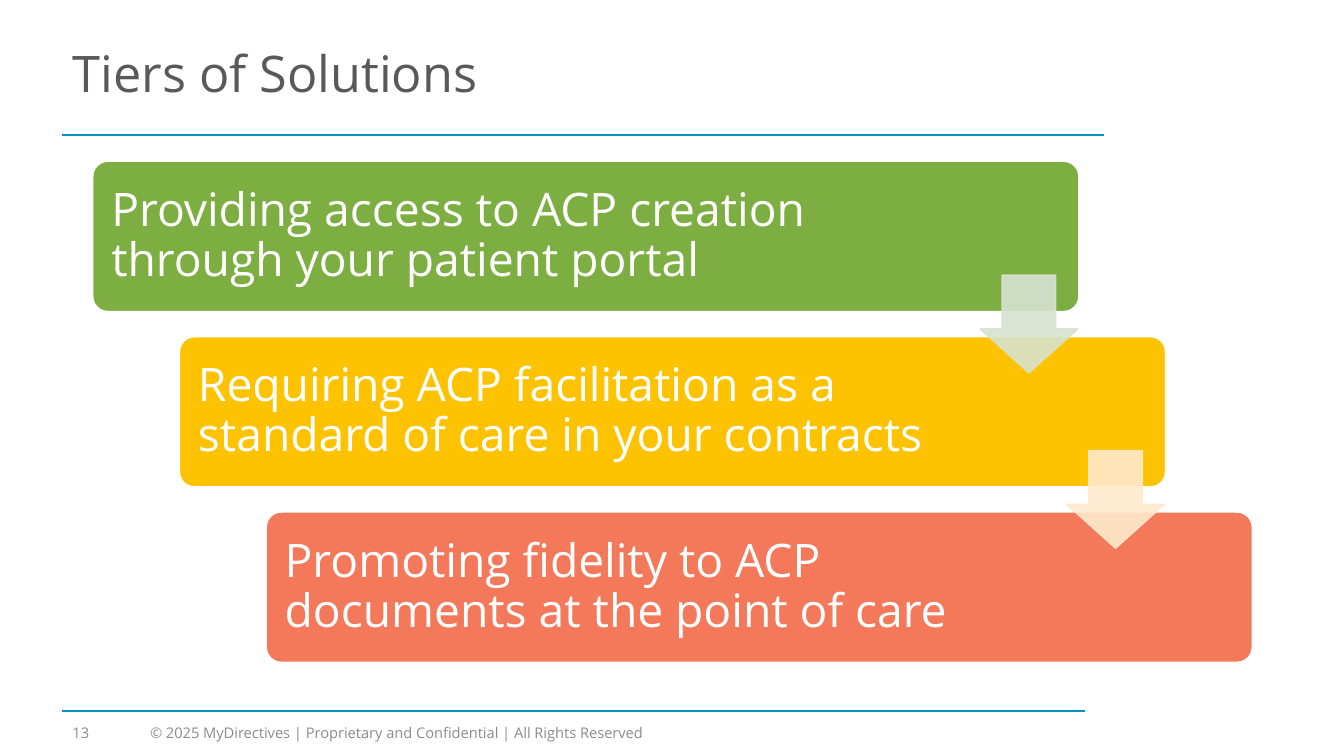
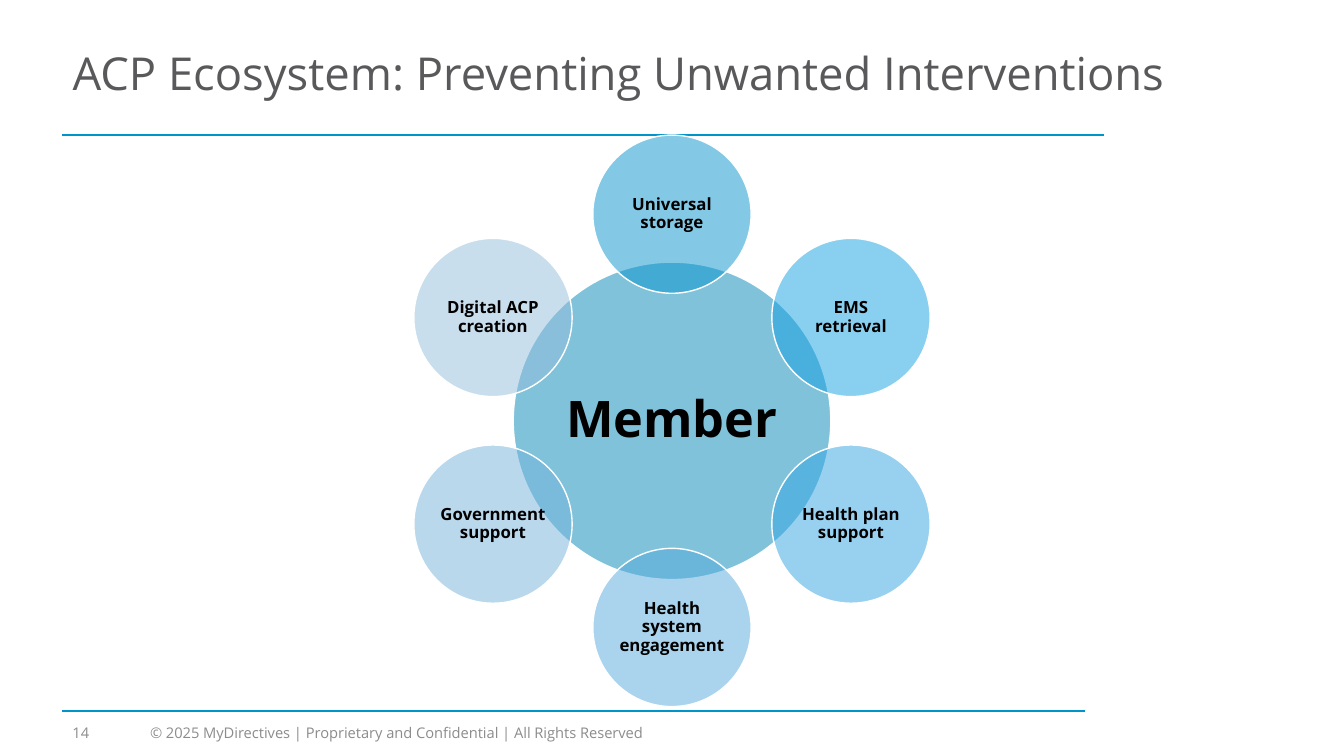
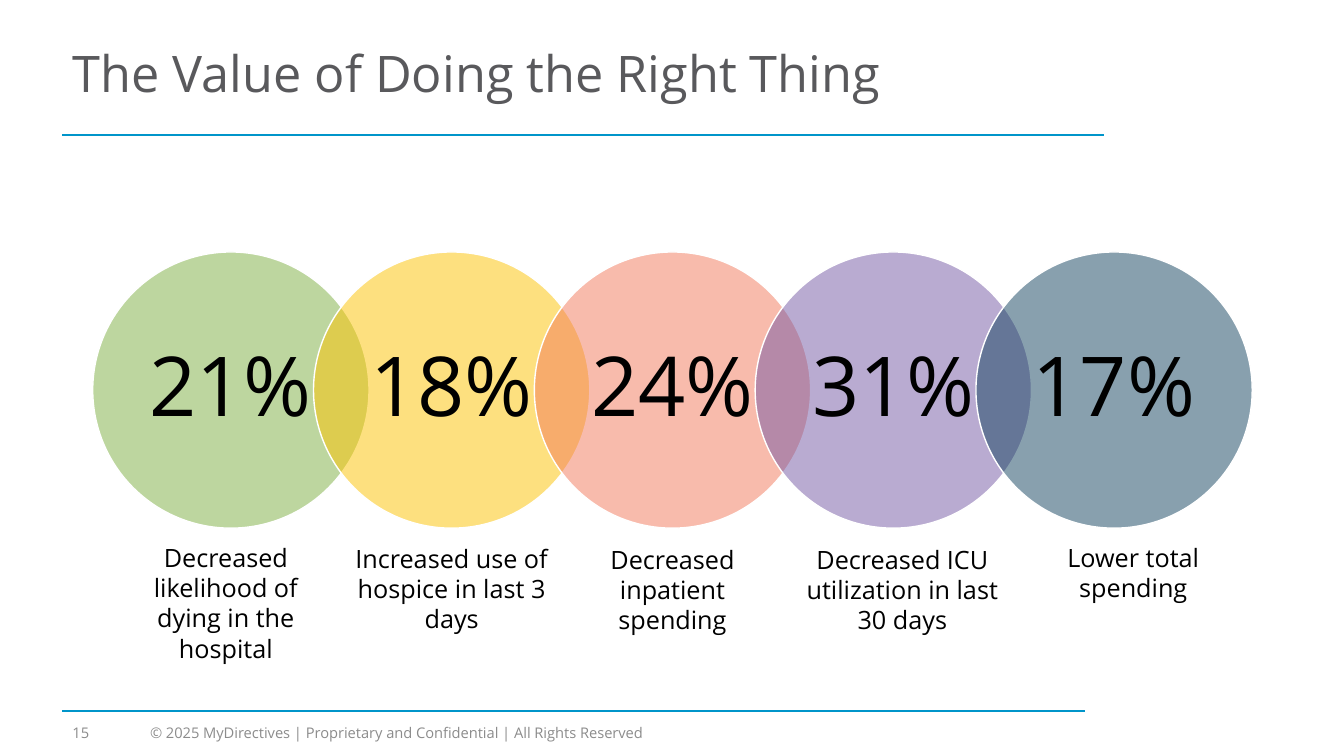
from math import cos, radians, sin

from pptx import Presentation
from pptx.dml.color import RGBColor
from pptx.enum.shapes import MSO_CONNECTOR, MSO_SHAPE
from pptx.enum.text import MSO_ANCHOR, MSO_AUTO_SIZE, PP_ALIGN
from pptx.oxml.ns import qn
from pptx.util import Inches, Pt

STRAIGHT = MSO_CONNECTOR.STRAIGHT
ROUNDED, ELLIPSE, DOWN_ARROW = (
    MSO_SHAPE.ROUNDED_RECTANGLE, MSO_SHAPE.OVAL, MSO_SHAPE.DOWN_ARROW)
TOP, MIDDLE, BOTTOM = MSO_ANCHOR.TOP, MSO_ANCHOR.MIDDLE, MSO_ANCHOR.BOTTOM
LEFT, CENTER = PP_ALIGN.LEFT, PP_ALIGN.CENTER
NO_AUTOFIT = MSO_AUTO_SIZE.NONE
TITLE_ONLY = 5

WIDTH, HEIGHT = Inches(13.33), Inches(7.5)
ROWS = 75
CELL = HEIGHT / ROWS  # square grid cell: one column wide, one row high

FONT = "Open Sans"
WHITE, BLACK = "FFFFFF", "000000"
RULE, TITLE, FOOTER = "0095CA", "59595C", "8C8C8C"
GREEN, YELLOW, CORAL, PURPLE, NAVY = "7CAE41", "FDC300", "F3795A", "7459A5", "12425F"
COPYRIGHT = "© 2025 MyDirectives | Proprietary and Confidential | All Rights Reserved"


def cells(*counts):
    return [round(count * CELL) for count in counts]


def color(hex_code):
    return RGBColor.from_string(hex_code)


def write(frame, text, size=18, ink=BLACK, bold=False, align=LEFT,
          anchor=TOP, spacing=1, insets=(1, 0.5, 1, 0.5)):
    """Fill a text frame with one paragraph; insets are left, top, right, bottom."""
    frame.auto_size = NO_AUTOFIT
    frame.word_wrap = True
    frame.vertical_anchor = anchor
    (frame.margin_left, frame.margin_top,
     frame.margin_right, frame.margin_bottom) = cells(*insets)
    paragraph = frame.paragraphs[0]
    paragraph.alignment = align
    paragraph.line_spacing = spacing
    run = paragraph.add_run()
    run.text = text
    run.font.name = FONT
    run.font.size = Pt(size)
    run.font.bold = bold
    run.font.color.rgb = color(ink)


class Deck:
    """Holds the shared style and the slide being drawn."""

    def __init__(self, first_number):
        self.presentation = Presentation()
        self.presentation.slide_width = WIDTH
        self.presentation.slide_height = HEIGHT
        self.number = first_number
        self.slide = None

    def new_slide(self, title, size=36):
        layout = self.presentation.slide_layouts[TITLE_ONLY]
        self.slide = self.presentation.slides.add_slide(layout)
        self.rule(13.4, 109.5)
        self.rule(70.5, 107.6)
        footer = dict(size=10.5, ink=FOOTER, anchor=BOTTOM)
        self.label(13.9, 70.1, 60.3, 4, COPYRIGHT, **footer)
        self.label(6.2, 70.1, 5.8, 4, str(self.number), **footer)
        heading = self.slide.shapes.title
        heading.left, heading.top, heading.width, heading.height = cells(
            6.2, 1.7, 118, 11.7)
        write(heading.text_frame, title, size=size, ink=TITLE,
              anchor=MIDDLE, spacing=0.9)
        self.number += 1

    def rule(self, row, end):
        line = self.slide.shapes.add_connector(STRAIGHT, *cells(6.2, row, end, row))
        line.line.color.rgb = color(RULE)
        line.line.width = Pt(1.5)
        properties = line._element.spPr
        properties.append(properties.makeelement(qn("a:effectLst"), {}))

    def label(self, left, top, width, height, text, **style):
        box = self.slide.shapes.add_textbox(*cells(left, top, width, height))
        write(box.text_frame, text, **style)

    def block(self, kind, left, top, width, height, fill, outline=WHITE,
              opacity=100, adjust=(), text=None, **style):
        """Draw a preset shape; opacity applies to its fill colour."""
        shape = self.slide.shapes.add_shape(kind, *cells(left, top, width, height))
        shape.shadow.inherit = False
        for index, value in enumerate(adjust):
            shape.adjustments[index] = value
        shape.fill.solid()
        shape.fill.fore_color.rgb = color(fill)
        shape.line.color.rgb = color(outline)
        shape.line.width = Pt(1)
        if opacity < 100:
            for node in shape._element.spPr.iter(qn("a:srgbClr")):
                if node.get("val") == fill:
                    alpha = node.makeelement(
                        qn("a:alpha"), {"val": str(opacity * 1000)})
                    node.append(alpha)
        if text:
            write(shape.text_frame, text, anchor=MIDDLE, spacing=0.9, **style)

    def circle(self, center_x, center_y, diameter, fill, text, **style):
        self.block(ELLIPSE, center_x - diameter / 2, center_y - diameter / 2,
                   diameter, diameter, fill, opacity=50, text=text,
                   align=CENTER, **style)


def draw_tiers(deck):
    tiers = [
        (GREEN, "Providing access to ACP creation through your patient portal"),
        (YELLOW, "Requiring ACP facilitation as a standard of care in your contracts"),
        (CORAL, "Promoting fidelity to ACP documents at the point of care"),
    ]
    arrow_tints = ["D7E3CF", "FEE9CC"]
    step_x, step_y = 8.6, 17.4
    deck.new_slide("Tiers of Solutions")
    for step, (fill, text) in enumerate(tiers):
        deck.block(ROUNDED, 9.2 + step * step_x, 16 + step * step_y, 97.8, 14.9,
                   fill, adjust=[0.1], text=text, size=33, ink=WHITE,
                   insets=(1.4, 1.4, 19.7, 1.4))
    for step, tint in enumerate(arrow_tints):
        deck.block(DOWN_ARROW, 97.2 + step * step_x, 27.3 + step * step_y, 9.7, 9.7,
                   tint, outline=tint, opacity=90, adjust=[0.55, 0.45])


def draw_ecosystem(deck):
    partners = [
        ("0994CD", "Universal storage"),
        ("14A0E1", "EMS retrieval"),
        ("32A5E2", "Health plan support"),
        ("56ABDD", "Health system engagement"),
        ("77B3DB", "Government support"),
        ("95BEDC", "Digital ACP creation"),
    ]
    hub_x, hub_y, orbit = 66.65, 41.75, 20.5
    deck.new_slide("ACP Ecosystem: Preventing Unwanted Interventions", size=32.4)
    deck.circle(hub_x, hub_y, 31.5, "0087B7", "Member", size=36, bold=True,
                insets=[0.5] * 4)
    for position, (fill, text) in enumerate(partners):
        angle = radians(position * 360 / len(partners))
        deck.circle(hub_x + orbit * sin(angle), hub_y - orbit * cos(angle), 15.7,
                    fill, text, size=12, bold=True, insets=[0.2] * 4)


def draw_value(deck):
    outcomes = [
        (GREEN, "21%", 11.2, 53.3, "Decreased likelihood of dying in the hospital"),
        (YELLOW, "18%", 33.6, 53.4, "Increased use of hospice in last 3 days"),
        (CORAL, "24%", 55.5, 53.5, "Decreased inpatient spending"),
        (PURPLE, "31%", 78.3, 53.5, "Decreased ICU utilization in last 30 days"),
        (NAVY, "17%", 101.2, 53.3, "Lower total spending"),
    ]
    deck.new_slide("The Value of Doing the Right Thing")
    for position, (fill, share, left, top, caption) in enumerate(outcomes):
        deck.circle(22.9 + position * 21.9, 38.7, 27.4, fill, share, size=59,
                    insets=(1.5, 0.8, 1.5, 0.8))
        deck.label(left, top, 22.4, 13.1, caption, align=CENTER)


def main():
    deck = Deck(first_number=13)
    draw_tiers(deck)
    draw_ecosystem(deck)
    draw_value(deck)
    deck.presentation.save("out.pptx")


if __name__ == "__main__":
    main()
